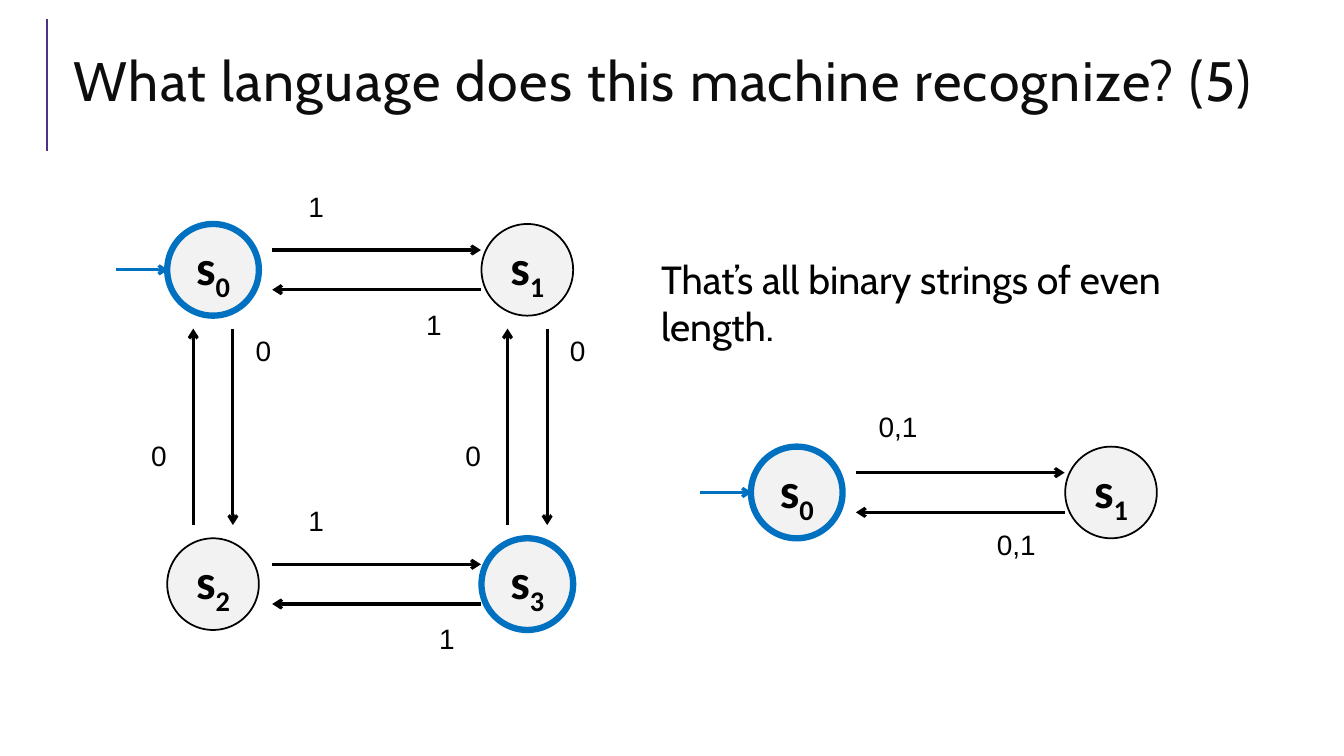
from lxml.etree import SubElement
from pptx import Presentation
from pptx.dml.color import RGBColor
from pptx.enum.shapes import MSO_CONNECTOR, MSO_SHAPE
from pptx.enum.text import MSO_ANCHOR, MSO_AUTO_SIZE, PP_ALIGN
from pptx.oxml.ns import qn
from pptx.util import Cm, Pt

BLACK = RGBColor(0x00, 0x00, 0x00)
TITLE_COLOR = RGBColor(0x0D, 0x0D, 0x0D)
BLUE = RGBColor(0x00, 0x70, 0xC0)
PURPLE = RGBColor(0x4C, 0x32, 0x82)
STATE_FILL = RGBColor(0xF2, 0xF2, 0xF2)

STATE_SIZE = 2.31
STATE_STEP = 7.92
ARROW_OFFSET = 0.5


def write(paragraph, text, size=20, font="Arial", color=BLACK, bold=False,
          baseline=None, spacing=None):
    """Append a formatted run; baseline and spacing are raw DrawingML values."""
    run = paragraph.add_run()
    run.text = text
    run.font.size = Pt(size)
    run.font.name = font
    run.font.color.rgb = color
    run.font.bold = bold
    for name, value in (("baseline", baseline), ("spc", spacing)):
        if value is not None:
            run.font._element.set(name, str(value))


class MachineSlide:
    """Holds the current slide and the style of its state machines."""

    def __init__(self, presentation):
        self.slide = presentation.slides.add_slide(presentation.slide_layouts[5])
        self.shapes = self.slide.shapes

    def title(self, text):
        shape = self.slide.shapes.title
        shape.left, shape.top = Cm(1.6), Cm(0.74)
        shape.width, shape.height = Cm(31.06), Cm(2.82)
        frame = shape.text_frame
        frame.auto_size = MSO_AUTO_SIZE.NONE
        frame.vertical_anchor = MSO_ANCHOR.MIDDLE
        paragraph = frame.paragraphs[0]
        paragraph.alignment = PP_ALIGN.LEFT
        paragraph.line_spacing = 0.8
        write(paragraph, text, size=39.6, font="Cabin", color=TITLE_COLOR, spacing=100)

    def start_group(self):
        self.shapes = self.slide.shapes.add_group_shape().shapes

    def end_group(self):
        self.shapes = self.slide.shapes

    def line(self, x1, y1, x2, y2, color=BLACK, width=2.25, arrow=True):
        connector = self.shapes.add_connector(
            MSO_CONNECTOR.STRAIGHT, Cm(x1), Cm(y1), Cm(x2), Cm(y2))
        connector.line.color.rgb = color
        connector.line.width = Pt(width)
        properties = connector._element.spPr
        if arrow:
            SubElement(properties.find(qn("a:ln")), qn("a:tailEnd"), type="arrow")
        SubElement(properties, qn("a:effectLst"))

    def text(self, text, x, y, width=0.99, height=1.0, **style):
        frame = self.shapes.add_textbox(Cm(x), Cm(y), Cm(width), Cm(height)).text_frame
        frame.word_wrap = True
        write(frame.paragraphs[0], text, **style)

    def state(self, number, x, y, accepting=False):
        """Draw a state circle centred on (x, y)."""
        circle = self.shapes.add_shape(
            MSO_SHAPE.OVAL, Cm(x - STATE_SIZE / 2), Cm(y - STATE_SIZE / 2),
            Cm(STATE_SIZE), Cm(STATE_SIZE))
        circle.shadow.inherit = False
        circle.fill.solid()
        circle.fill.fore_color.rgb = STATE_FILL
        circle.line.color.rgb = BLUE if accepting else BLACK
        circle.line.width = Pt(4.5 if accepting else 1.25)
        frame = circle.text_frame
        frame.word_wrap = False
        frame.vertical_anchor = MSO_ANCHOR.MIDDLE
        paragraph = frame.paragraphs[0]
        paragraph.alignment = PP_ALIGN.CENTER
        write(paragraph, "s", size=35, font="Calibri", bold=True)
        write(paragraph, str(number), size=35, font="Calibri", bold=True, baseline=-25000)

    def start_arrow(self, x, y):
        self.line(x - 2.45, y, x - 1.13, y, color=BLUE)

    def horizontal_pair(self, x, y):
        """Draw the arrows between a state at (x, y) and its right neighbour."""
        near, far = x + 1.49, x + 6.75
        self.line(near, y - ARROW_OFFSET, far, y - ARROW_OFFSET)
        self.line(far, y + ARROW_OFFSET, near, y + ARROW_OFFSET)

    def vertical_pair(self, x, y):
        """Draw the arrows between a state at (x, y) and the one below it."""
        near, far = y + 1.48, y + 6.43
        self.line(x + ARROW_OFFSET, near, x + ARROW_OFFSET, far)
        self.line(x - ARROW_OFFSET, far, x - ARROW_OFFSET, near)


def draw_four_state_machine(machine, x, y):
    machine.start_group()
    for number in range(4):
        row, column = divmod(number, 2)
        machine.state(number, x + column * STATE_STEP, y + row * STATE_STEP,
                      accepting=number in (0, 3))
    for row, return_offset in enumerate((5.12, 5.45)):
        row_y = y + row * STATE_STEP
        machine.horizontal_pair(x, row_y)
        machine.text("1", x + 2.15, row_y - 2.15)
        machine.text("1", x + return_offset, row_y + 0.82)
    for column in range(2):
        column_x = x + column * STATE_STEP
        machine.vertical_pair(column_x, y)
        machine.text("0", column_x + 0.82, y + 1.48)
        machine.text("0", column_x - 1.81, y + 4.12)
    machine.start_arrow(x, y)
    machine.end_group()


def draw_two_state_machine(machine, x, y):
    machine.start_group()
    machine.state(0, x, y, accepting=True)
    machine.state(1, x + STATE_STEP, y)
    machine.horizontal_pair(x, y)
    machine.start_arrow(x, y)
    machine.text("0,1", x + 1.81, y - 2.22, width=2.64)
    machine.text("0,1", x + 4.79, y + 0.75, width=1.98)
    machine.end_group()


def main():
    presentation = Presentation()
    presentation.slide_width, presentation.slide_height = Cm(33.87), Cm(19.05)
    machine = MachineSlide(presentation)
    machine.line(1.19, 3.81, 1.19, 0.48, color=PURPLE, width=1.5, arrow=False)
    machine.title("What language does this machine recognize? (5)")
    draw_four_state_machine(machine, 5.37, 6.8)
    machine.text("That’s all binary strings of even length.", 16.41, 6.3,
                 width=14.91, height=2.64, size=28, font="Cabin")
    draw_two_state_machine(machine, 20.08, 12.41)
    presentation.save("out.pptx")


if __name__ == "__main__":
    main()
